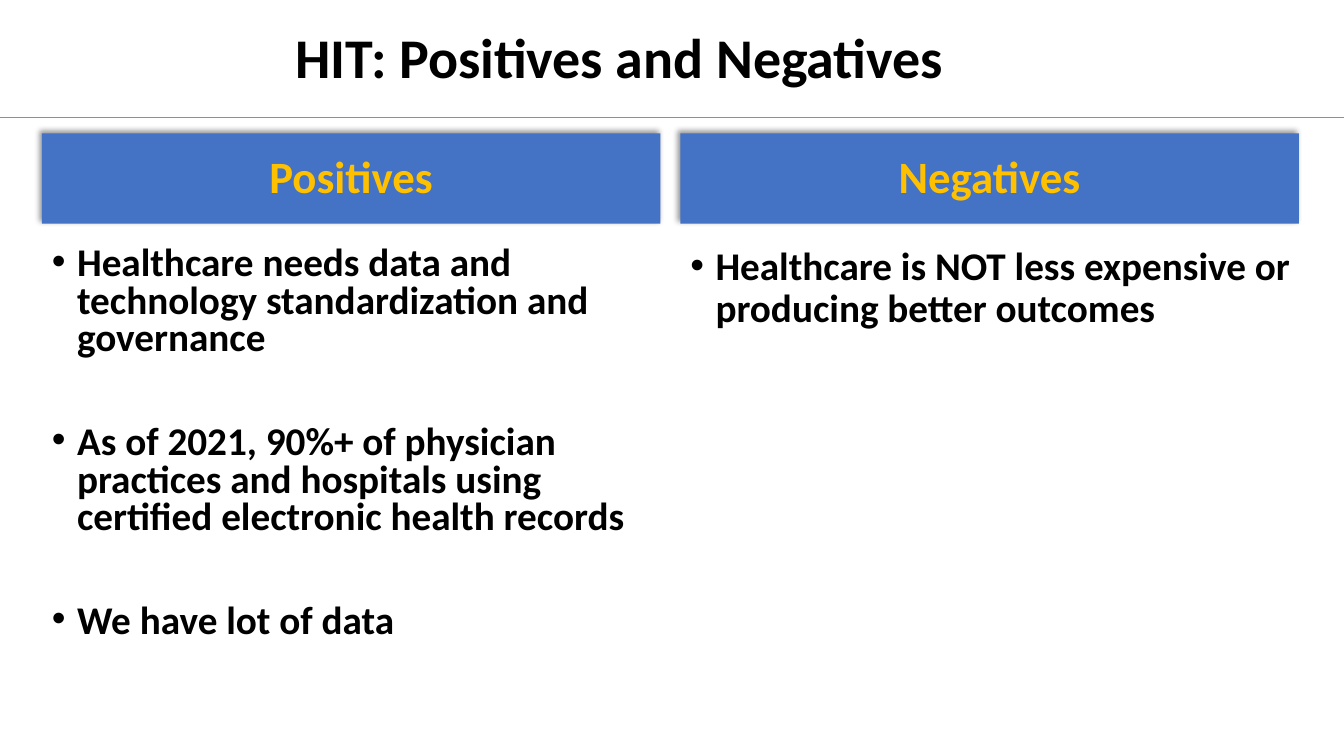
from dataclasses import dataclass

from lxml.etree import SubElement
from pptx import Presentation
from pptx.dml.color import RGBColor
from pptx.enum.shapes import MSO_CONNECTOR, MSO_SHAPE
from pptx.enum.text import MSO_ANCHOR, PP_ALIGN
from pptx.oxml.ns import qn
from pptx.util import Pt

PX = 9525  # EMU, 96 px to the inch
SLIDE_WIDTH, SLIDE_HEIGHT = 1280, 720


@dataclass(frozen=True)
class Theme:
    font: str = "Calibri"
    ink: str = "000000"
    banner: str = "4472C4"
    banner_text: str = "FFC000"
    rule: str = "70AD47"
    title_size: int = 40
    banner_size: int = 32
    body_size: int = 28


THEME = Theme()

COLUMNS = [
    ("Positives", 0.8, [
        "Healthcare needs data and technology standardization and governance",
        "As of 2021, 90%+ of physician practices and hospitals using "
        "certified electronic health records",
        "We have lot of data",
    ]),
    ("Negatives", 0.9, [
        "Healthcare is NOT less expensive or producing better outcomes",
    ]),
]


def emu(*lengths):
    return [length * PX for length in lengths]


def add_bullet(paragraph, indent=24):
    properties = paragraph._p.get_or_add_pPr()
    properties.set("marL", str(indent * PX))
    properties.set("indent", str(-indent * PX))
    SubElement(properties, qn("a:buFont"), typeface="Arial")
    SubElement(properties, qn("a:buChar"), char="•")


def write(shape, paragraphs, *, size, color=THEME.ink, align=PP_ALIGN.LEFT,
          anchor=MSO_ANCHOR.TOP, spacing=0.9, gap=0, bullets=False):
    """Fill a shape with bold paragraphs, gap points apart."""
    frame = shape.text_frame
    frame.word_wrap = True
    frame.vertical_anchor = anchor
    for index, text in enumerate(paragraphs):
        paragraph = frame.add_paragraph() if index else frame.paragraphs[0]
        paragraph.text = text
        if bullets:
            add_bullet(paragraph)
        paragraph.alignment = align
        paragraph.line_spacing = spacing
        paragraph.space_before = Pt(gap if index else 0)
        font = paragraph.runs[0].font
        font.name, font.size, font.bold = THEME.font, Pt(size), True
        font.color.rgb = RGBColor.from_string(color)


def add_soft_shadow(shape):
    shape.shadow.inherit = False
    effects = shape._element.spPr.find(qn("a:effectLst"))
    shadow = SubElement(effects, qn("a:outerShdw"), blurRad=str(Pt(4)),
                        dist=str(Pt(3)), dir=str(225 * 60000),
                        algn="br", rotWithShape="0")
    black = SubElement(shadow, qn("a:srgbClr"), val="000000")
    SubElement(black, qn("a:alpha"), val="40000")


def add_title(slide, left, top, width, height):
    title = slide.shapes.title
    title.left, title.top, title.width, title.height = emu(left, top, width, height)
    write(title, ["HIT: Positives and Negatives"], size=THEME.title_size,
          anchor=MSO_ANCHOR.MIDDLE)


def add_rule(slide, top):
    rule = slide.shapes.add_connector(
        MSO_CONNECTOR.STRAIGHT, *emu(0, top, SLIDE_WIDTH, top))
    rule.line.color.rgb = RGBColor.from_string(THEME.rule)
    rule.line.width = Pt(1.25)
    SubElement(rule._element.spPr, qn("a:effectLst"))


def add_column(slide, left, top, width, height, heading, spacing, points):
    """Place a banner heading with its bulleted points below."""
    banner_height, banner_gap = 86, 17
    banner = slide.shapes.add_shape(
        MSO_SHAPE.RECTANGLE, *emu(left, top, width, banner_height))
    banner.fill.solid()
    banner.fill.fore_color.rgb = RGBColor.from_string(THEME.banner)
    banner.line.fill.background()
    add_soft_shadow(banner)
    write(banner, [heading], size=THEME.banner_size, color=THEME.banner_text,
          align=PP_ALIGN.CENTER, anchor=MSO_ANCHOR.MIDDLE)

    offset = banner_height + banner_gap
    body = slide.shapes.add_textbox(
        *emu(left, top + offset, width + 3, height - offset))
    write(body, points, size=THEME.body_size, spacing=spacing, gap=47,
          bullets=True)


def main():
    deck = Presentation()
    deck.slide_width, deck.slide_height = emu(SLIDE_WIDTH, SLIDE_HEIGHT)
    slide = deck.slides.add_slide(deck.slide_layouts.get_by_name("Title Only"))
    add_rule(slide, 112)
    column_width, column_gap = 589, 19
    for index, column in enumerate(COLUMNS):
        left = 40 + index * (column_width + column_gap)
        add_column(slide, left, 127, column_width, 523, *column)
    add_title(slide, 272, 19, 966, 77)
    deck.save("out.pptx")


if __name__ == "__main__":
    main()
